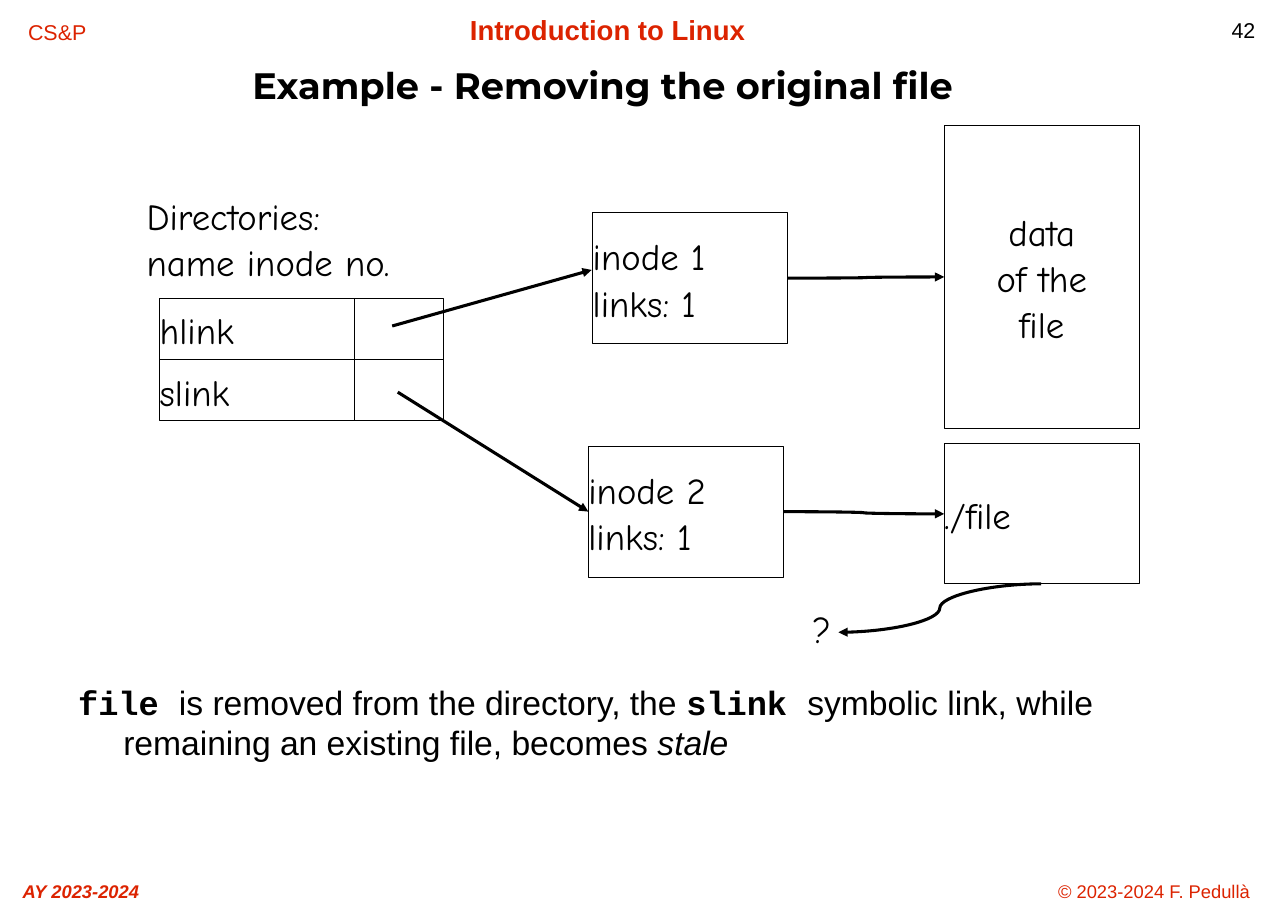
"""Draw the slide on removing a file that a symbolic link points to."""
from typing import NamedTuple

from lxml import etree
from pptx import Presentation, util as u
from pptx.dml.color import RGBColor
from pptx.enum import shapes, text
from pptx.oxml.ns import qn

WIDE, HIGH = 11.69, 8.27
INK, RED = "000000", "DC2300"
SANS, HAND, MONO, HEAD = "Arial", "Comic Neue", "Courier New", "Montserrat"
LEFT, MID = text.PP_ALIGN.LEFT, text.PP_ALIGN.CENTER
LINE, CURVE = shapes.MSO_CONNECTOR.STRAIGHT, shapes.MSO_CONNECTOR.CURVE


class Area(NamedTuple):
    """Place and size, in percent of the slide."""
    x: float
    y: float
    w: float
    h: float


class Font(NamedTuple):
    """Look of a run."""
    name: str
    size: float
    tint: str = INK
    bold: bool = False
    slant: bool = False


class Label(NamedTuple):
    """Free text."""
    words: str
    area: Area
    font: Font
    align: text.PP_ALIGN = LEFT
    pitch: float = 1.01
    inset: float = 0.1
    top: bool = True


class Box(NamedTuple):
    """Outlined rectangle with text."""
    words: str
    area: Area
    align: text.PP_ALIGN = LEFT


class Arrow(NamedTuple):
    """Arrow whose ends are points, or a box with the number of a side."""
    kind: shapes.MSO_CONNECTOR
    start: tuple
    end: tuple


NOTE = Font(HAND, 24)
COL, CELL, ROW = 15.14, 6.93, 6.71
TABLE_X, TABLE_Y = 12.4, 32.77
NODE_H = 14.39
DATA_X = 73.31
FOOT_Y, BAR_H = 96.01, 3.99

LABELS = [
    Label("42", Area(94.78, 1.21, 5.22, 4.72), Font(SANS, 14)),
    Label("© 2023-2024 F. Pedullà", Area(79.21, FOOT_Y, 20.79, BAR_H),
          Font(SANS, 12, RED), MID),
    Label("AY 2023-2024", Area(0, FOOT_Y, 12.57, BAR_H),
          Font(SANS, 12, RED, True, True), MID),
    Label("Introduction to Linux", Area(33.53, 0.85, 27.29, BAR_H),
          Font(SANS, 18, RED, True), MID),
    Label("CS&P", Area(0.6, 1.45, 7.7, BAR_H), Font(SANS, 14, RED), MID),
    Label("Example - Removing the original file",
          Area(19.59, 6.29, 60.82, 6.89), Font(HEAD, 24, INK, True),
          LEFT, 0.85, 0, False),
    Label("Directories:\nname inode no.", Area(11.38, 21.04, 29.34, 12.58),
          NOTE, LEFT, 1.05, 0),
    Label("?", Area(61.33, 66.38, 4.96, 6.05), NOTE, MID, 1.05, 0),
]

BOXES = {
    "node1": Box("inode 1\nlinks: 1", Area(46.02, 23.34, COL, NODE_H)),
    "node2": Box("inode 2\nlinks: 1", Area(45.68, 48.97, COL, NODE_H)),
    "data": Box("data\nof the\nfile", Area(DATA_X, 13.78, COL, 33.25), MID),
    "file": Box("./file", Area(DATA_X, 48.73, COL, 15.36)),
}
for row, name in enumerate(("hlink", "slink")):
    y = TABLE_Y + row * ROW
    BOXES[name] = Box(name, Area(TABLE_X, y, COL, ROW))
    BOXES[name + " node"] = Box("", Area(TABLE_X + COL, y, CELL, ROW))

ARROWS = [
    Arrow(LINE, (30.45, 35.79), (45.94, 29.63)),
    Arrow(LINE, (30.88, 43.05), ("node2", 1)),
    Arrow(CURVE, ("node1", 3), ("data", 1)),
    Arrow(CURVE, ("node2", 3), ("file", 1)),
    Arrow(CURVE, (80.84, 64.09), (65.1, 69.41)),
]

BODY = Area(6.07, 74.85, 88.62, 14.63)
CODE, PLAIN = Font(MONO, 22, INK, True), Font(SANS, 22)
RUNS = [
    ("file ", CODE),
    ("is removed from the directory, the ", PLAIN),
    ("slink ", CODE),
    ("symbolic link, while remaining an existing file, becomes ", PLAIN),
    ("stale", PLAIN._replace(slant=True)),
]


def tint(code: str) -> RGBColor:
    """Turn a hex string into a colour."""
    return RGBColor.from_string(code)


def spot(x: float, y: float) -> tuple:
    """Turn shares of the slide into lengths."""
    return u.Inches(x * WIDE / 100), u.Inches(y * HIGH / 100)


def place(area: Area) -> tuple:
    """Turn an area into left, top, width and height."""
    return spot(area.x, area.y) + spot(area.w, area.h)


def style(run, font: Font) -> None:
    """Give a run its look."""
    face = run.font
    face.name, face.size = font.name, u.Pt(font.size)
    face.bold, face.italic = font.bold, font.slant
    face.color.rgb = tint(font.tint)


def write(frame, words: str, font: Font, align, pitch: float) -> None:
    """Fill a frame with lines of one look."""
    frame.text = words
    for para in frame.paragraphs:
        para.alignment, para.line_spacing = align, pitch
        for run in para.runs:
            style(run, font)


def fit(frame, inset: float, wrap: bool, top: bool) -> None:
    """Set the margins, wrapping and anchor of a frame."""
    frame.margin_left = frame.margin_right = u.Inches(inset)
    frame.margin_top = frame.margin_bottom = u.Inches(inset / 2)
    frame.word_wrap = wrap
    anchor = text.MSO_ANCHOR
    frame.vertical_anchor = anchor.TOP if top else anchor.MIDDLE


def add_label(page, item: Label) -> None:
    """Draw free text."""
    frame = page.add_textbox(*place(item.area)).text_frame
    fit(frame, item.inset, True, item.top)
    write(frame, item.words, item.font, item.align, item.pitch)


def add_box(page, item: Box):
    """Draw an outlined rectangle."""
    rect = page.add_shape(shapes.MSO_SHAPE.RECTANGLE, *place(item.area))
    rect.shadow.inherit = False
    rect.fill.background()
    rect.line.color.rgb = tint(INK)
    rect.line.width = 0
    fit(rect.text_frame, 0, False, False)
    write(rect.text_frame, item.words, NOTE, item.align, 1.05)
    return rect


def add_arrow(page, item: Arrow, rects: dict) -> None:
    """Draw an arrow and join the ends that name a box."""
    ends = [(0, 0) if end[0] in rects else spot(*end)
            for end in (item.start, item.end)]
    link = page.add_connector(item.kind, *ends[0], *ends[1])
    if item.start[0] in rects:
        link.begin_connect(rects[item.start[0]], item.start[1])
    if item.end[0] in rects:
        link.end_connect(rects[item.end[0]], item.end[1])
    link.line.color.rgb = tint(INK)
    link.line.width = 0
    props = link.line._get_or_add_ln()
    etree.SubElement(props, qn("a:tailEnd"), type="triangle")
    etree.SubElement(props.getparent(), qn("a:effectLst"))


def add_body(page) -> None:
    """Draw the closing sentence with its hanging indent."""
    frame = page.add_textbox(*place(BODY)).text_frame
    fit(frame, 0, True, True)
    para = frame.paragraphs[0]
    para.line_spacing = u.Pt(26.2)
    props = para._p.get_or_add_pPr()
    props.set("marL", str(u.Inches(0.41)))
    props.set("indent", str(u.Inches(-0.41)))
    for words, font in RUNS:
        run = para.add_run()
        run.text = words
        style(run, font)


def main() -> None:
    """Build and save the slide."""
    deck = Presentation()
    deck.slide_width, deck.slide_height = u.Inches(WIDE), u.Inches(HIGH)
    page = deck.slides.add_slide(deck.slide_layouts[6]).shapes
    for label in LABELS:
        add_label(page, label)
    rects = {name: add_box(page, box) for name, box in BOXES.items()}
    for arrow in ARROWS:
        add_arrow(page, arrow, rects)
    add_body(page)
    deck.save("out.pptx")


if __name__ == "__main__":
    main()
